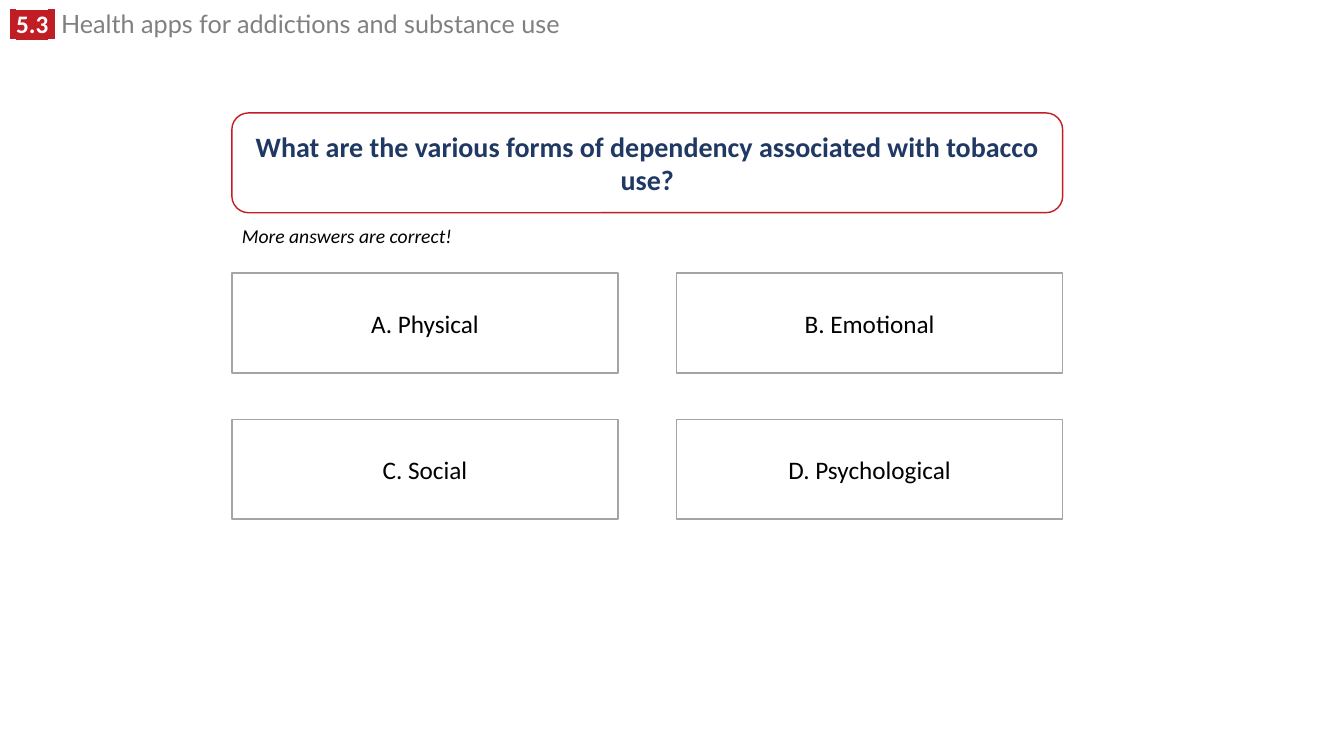
from dataclasses import dataclass

from lxml import etree
from pptx import Presentation
from pptx.dml.color import RGBColor
from pptx.enum import shapes, text
from pptx.oxml import ns
from pptx.util import Inches, Pt

RED, WHITE, BLACK = "C01E24", "FFFFFF", "000000"
GREY, NAVY, SILVER = "808080", "203864", "A5A5A5"
LEFT, BOX_HEIGHT = 2.3, 0.99
ANSWER_TOP, ANSWER_WIDTH = 2.71, 3.83
COLUMN_STEP, ROW_STEP = 4.41, 1.45


@dataclass
class HeadingPart:
    words: str
    font: str = "Lato"
    color: str = WHITE
    highlight: str = ""


@dataclass
class Box:
    words: str
    left: float
    top: float
    width: float
    line: str = SILVER
    kind: shapes.MSO_SHAPE = shapes.MSO_SHAPE.RECTANGLE
    size: int = 18
    color: str = BLACK
    bold: bool = False


HEADING = [
    HeadingPart(" ", highlight=RED),
    HeadingPart("5.3", "Calibri", highlight=RED),
    HeadingPart(" ", highlight=RED),
    HeadingPart(" Health apps for addictions and substance use", color=GREY),
]
QUESTION = Box(
    "What are the various forms of dependency associated with tobacco use?",
    LEFT, 1.12, COLUMN_STEP + ANSWER_WIDTH, RED,
    shapes.MSO_SHAPE.ROUNDED_RECTANGLE, 20, NAVY, True,
)
ANSWERS = ["A. Physical", "B. Emotional", "C. Social", "D. Psychological"]


def rgb(color: str) -> RGBColor:
    return RGBColor.from_string(color)


def style_font(font, size: int, color: str, name: str = "Calibri",
               bold: bool = False, italic: bool = False) -> None:
    font.size, font.name = Pt(size), name
    font.bold, font.italic = bold, italic
    font.color.rgb = rgb(color)


def highlight_run(run, color: str) -> None:
    """Put a marker colour behind a run that already has a font colour."""
    fill = run.font._element.find(ns.qn("a:solidFill"))
    marker = etree.Element(ns.qn("a:highlight"))
    etree.SubElement(marker, ns.qn("a:srgbClr"), val=color)
    fill.addnext(marker)


def fill_heading(title) -> None:
    title.left, title.top = Inches(0), Inches(0.09)
    title.width, title.height = Inches(9.52), Inches(0.35)
    frame = title.text_frame
    frame.word_wrap = True
    frame.auto_size = text.MSO_AUTO_SIZE.SHAPE_TO_FIT_TEXT
    frame.vertical_anchor = text.MSO_ANCHOR.TOP
    paragraph = frame.paragraphs[0]
    paragraph.alignment = text.PP_ALIGN.LEFT
    paragraph.line_spacing = 0.8
    for part in HEADING:
        run = paragraph.add_run()
        run.text = part.words
        style_font(run.font, 18, part.color, part.font, bold=bool(part.highlight))
        if part.highlight:
            highlight_run(run, part.highlight)


def add_box(slide, box: Box) -> None:
    shape = slide.shapes.add_shape(
        box.kind, Inches(box.left), Inches(box.top), Inches(box.width), Inches(BOX_HEIGHT))
    shape.shadow.inherit = False
    shape.fill.solid()
    shape.fill.fore_color.rgb = rgb(WHITE)
    shape.line.color.rgb = rgb(box.line)
    shape.line.width = Pt(1)
    frame = shape.text_frame
    frame.text = box.words
    frame.word_wrap = True
    frame.vertical_anchor = text.MSO_ANCHOR.MIDDLE
    paragraph = frame.paragraphs[0]
    paragraph.alignment = text.PP_ALIGN.CENTER
    style_font(paragraph.runs[0].font, box.size, box.color, bold=box.bold)


def add_hint(slide) -> None:
    hint = slide.shapes.add_textbox(Inches(LEFT), Inches(2.17), Inches(2.34), Inches(0.34))
    frame = hint.text_frame
    frame.text = "More answers are correct!"
    frame.word_wrap = False
    frame.auto_size = text.MSO_AUTO_SIZE.SHAPE_TO_FIT_TEXT
    style_font(frame.paragraphs[0].runs[0].font, 14, BLACK, italic=True)


def main() -> None:
    presentation = Presentation()
    presentation.slide_width, presentation.slide_height = Inches(13.33), Inches(7.5)
    slide = presentation.slides.add_slide(presentation.slide_layouts[5])
    fill_heading(slide.shapes.title)
    add_box(slide, QUESTION)
    add_hint(slide)
    for index, answer in enumerate(ANSWERS):
        row, column = divmod(index, 2)
        add_box(slide, Box(answer, LEFT + column * COLUMN_STEP,
                           ANSWER_TOP + row * ROW_STEP, ANSWER_WIDTH))
    presentation.save("out.pptx")


if __name__ == "__main__":
    main()
